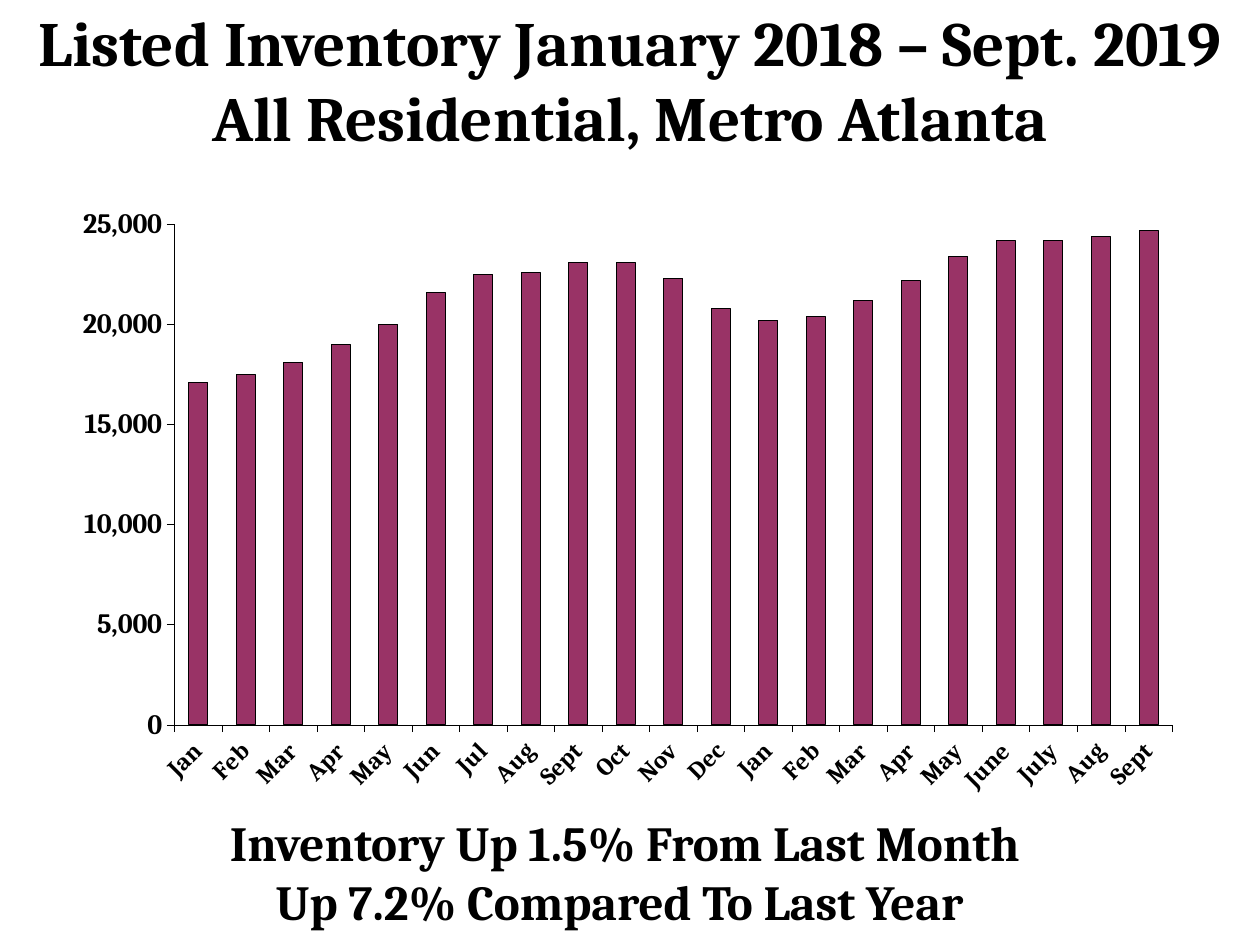
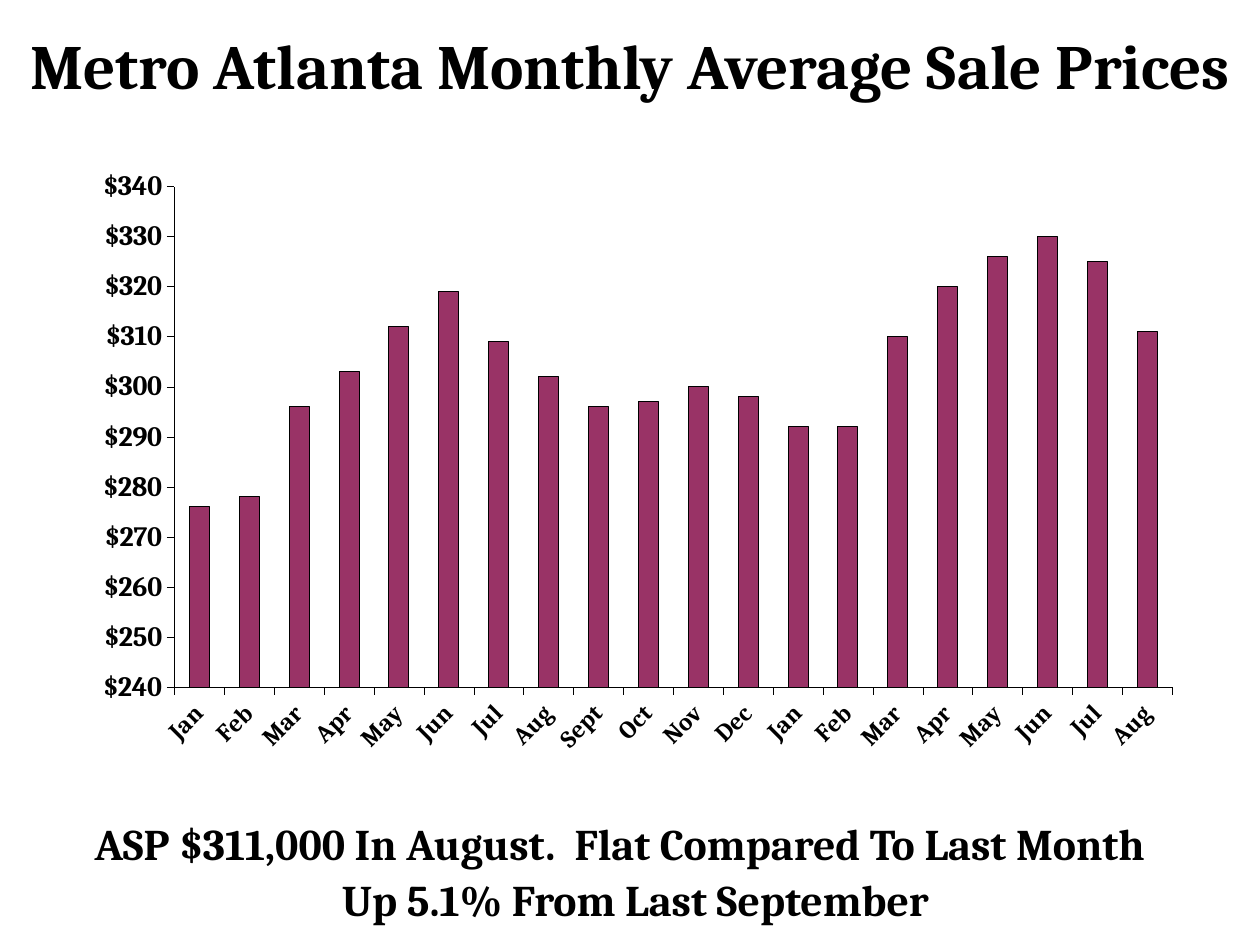
"""Build two slides of Atlanta housing columns, each with a headline and a takeaway."""
from dataclasses import dataclass

from lxml import etree
from pptx import Presentation
from pptx.chart.data import CategoryChartData
from pptx.dml.color import RGBColor
from pptx.enum import chart as charts, text
from pptx.oxml import ns
from pptx.util import Pt


@dataclass(frozen=True)
class Theme:
    """Colours, font and type sizes of the deck."""
    ink: RGBColor = RGBColor(0, 0, 0)
    column: RGBColor = RGBColor(0x99, 0x33, 0x66)
    paper: RGBColor = RGBColor(255, 255, 255)
    font: str = "Cambria"
    headline: int = 36
    months: int = 14
    amounts: int = 16
    hairline: float = 0.25
    outline: float = 0.5


class Deck:
    """Hold the theme and the current slide, and add each kind of element."""

    def __init__(self, theme):
        """Start an empty presentation of 720 by 540 points."""
        self.theme = theme
        self.prs = Presentation()
        self.prs.slide_width, self.prs.slide_height = Pt(720), Pt(540)

    def new_slide(self):
        """Add a slide with a title and a body placeholder."""
        self.slide = self.prs.slides.add_slide(self.prs.slide_layouts[1])
        self.slide.background.fill.solid()
        self.slide.background.fill.fore_color.rgb = self.theme.paper

    def style(self, font, size):
        """Apply the bold deck font at one size."""
        font.name, font.size, font.bold = self.theme.font, Pt(size), True
        font.color.rgb = self.theme.ink

    def fill_lines(self, holder, box, lines, size, gap=0):
        """Move a placeholder and fill it with centred, indented lines."""
        holder.left, holder.top, holder.width, holder.height = map(Pt, box)
        frame = holder.text_frame
        frame.word_wrap = True
        frame.auto_size = text.MSO_AUTO_SIZE.NONE
        frame.vertical_anchor = text.MSO_ANCHOR.MIDDLE
        for number, (words, indent) in enumerate(lines):
            line = frame.add_paragraph() if number else frame.paragraphs[0]
            props = line._p.get_or_add_pPr()
            props.set("marL", str(Pt(indent)))
            props.set("indent", "0")
            etree.SubElement(props, ns.qn("a:buNone"))
            line.alignment = text.PP_ALIGN.CENTER
            line.line_spacing = 1.0
            line.space_before = Pt(gap if number else 0)
            run = line.add_run()
            run.text = words
            self.style(run.font, size)

    def headline(self, middle, *lines):
        """Set the title centred on a given height."""
        self.fill_lines(self.slide.shapes.title, (0, middle - 39, 720, 78),
                        [(words, 0) for words in lines], self.theme.headline)

    def takeaway(self, lines, size, gap=0):
        """Set the conclusion below the chart."""
        self.fill_lines(self.slide.placeholders[1], (0, 462, 708, 72), lines, size, gap)

    def axis(self, axis, size):
        """Give an axis a hairline, outer ticks and bold labels."""
        axis.has_major_gridlines = False
        axis.major_tick_mark = charts.XL_TICK_MARK.OUTSIDE
        axis.minor_tick_mark = charts.XL_TICK_MARK.NONE
        axis.format.line.color.rgb = self.theme.ink
        axis.format.line.width = Pt(self.theme.hairline)
        self.style(axis.tick_labels.font, size)

    def columns(self, top, months, amounts, scale, number_format):
        """Add a column chart; scale is lowest, highest and step."""
        data = CategoryChartData()
        data.categories = months
        data.add_series("Series 1", amounts)
        chart = self.slide.shapes.add_chart(
            charts.XL_CHART_TYPE.COLUMN_CLUSTERED,
            Pt(30), Pt(top), Pt(651), Pt(399), data).chart
        chart.has_title = chart.has_legend = False
        self.style(chart.font, self.theme.months)

        by_month, by_amount = chart.category_axis, chart.value_axis
        self.axis(by_month, self.theme.months)
        by_month.tick_label_position = charts.XL_TICK_LABEL_POSITION.LOW
        slant = by_month._element.find(ns.qn("c:txPr")).find(ns.qn("a:bodyPr"))
        slant.set("rot", "-2700000")
        slant.set("vert", "horz")
        self.axis(by_amount, self.theme.amounts)
        by_amount.minimum_scale, by_amount.maximum_scale, by_amount.major_unit = scale
        by_amount.tick_labels.number_format = number_format
        by_amount.tick_labels.number_format_is_linked = False

        plot = chart.plots[0]
        plot.gap_width = 150
        plot.vary_by_categories = False
        bars = plot.series[0].format
        bars.fill.solid()
        bars.fill.fore_color.rgb = self.theme.column
        bars.line.color.rgb = self.theme.ink
        bars.line.width = Pt(self.theme.outline)
        self.place_plot(chart, x=0.107, y=0.088, w=0.876, h=0.717)

    def place_plot(self, chart, **shares):
        """Fix the inner plot area as shares of the chart."""
        area = chart._chartSpace.find(".//" + ns.qn("c:plotArea"))
        for automatic in area.findall(ns.qn("c:layout")):
            area.remove(automatic)
        layout = etree.Element(ns.qn("c:layout"))
        manual = etree.SubElement(layout, ns.qn("c:manualLayout"))
        settings = {"layoutTarget": "inner", "xMode": "edge", "yMode": "edge", **shares}
        for tag, value in settings.items():
            etree.SubElement(manual, ns.qn("c:" + tag)).set("val", str(value))
        area.insert(0, layout)


def main():
    """Build both slides and save the deck."""
    year = "Jan Feb Mar Apr May Jun Jul Aug Sept Oct Nov Dec".split()
    deck = Deck(Theme())

    deck.new_slide()
    deck.headline(45, "Listed Inventory January 2018 – Sept. 2019",
                  "All Residential, Metro Atlanta")
    listings = [17100, 17500, 18100, 19000, 20000, 21600, 22500, 22600, 23100, 23100, 22300,
                20800, 20200, 20400, 21200, 22200, 23400, 24200, 24200, 24400, 24700]
    deck.columns(93, year + year[:5] + ["June", "July", "Aug", "Sept"], listings,
                 (0, 25000, 5000), "#,##0")
    deck.takeaway([("Inventory Up 1.5% From Last Month", 6),
                   ("Up 7.2% Compared To Last Year", 0)], 28)

    deck.new_slide()
    deck.headline(37, "Metro Atlanta Monthly Average Sale Prices")
    prices = [276, 278, 296, 303, 312, 319, 309, 302, 296, 297,
              300, 298, 292, 292, 310, 320, 326, 330, 325, 311]
    deck.columns(71.5, year + year[:8], prices, (240, 340, 10), '"$"#,##0')
    deck.takeaway([("ASP $311,000 In August.  Flat Compared To Last Month", 0),
                   ("Up 5.1% From Last September", 18)], 25, gap=2)

    deck.prs.save("out.pptx")


if __name__ == "__main__":
    main()
